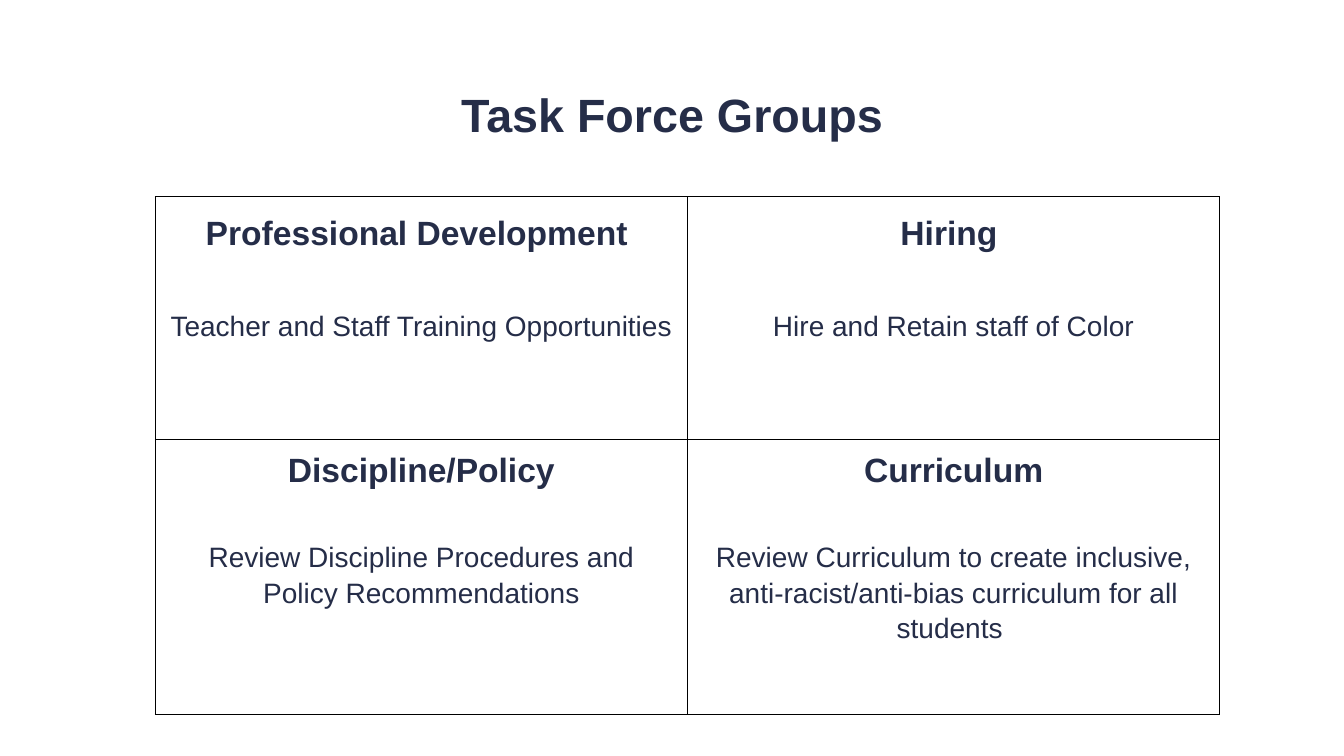
from lxml import etree
from pptx import Presentation
from pptx.dml.color import RGBColor
from pptx.enum.text import MSO_ANCHOR, PP_ALIGN
from pptx.oxml.ns import qn
from pptx.util import Pt

MIDDLE = MSO_ANCHOR.MIDDLE
CENTER = PP_ALIGN.CENTER

# Content
TITLE = "Task Force Groups"
GROUPS = [
    [("Professional Development ", "Teacher and Staff Training Opportunities"),
     ("Hiring ", "Hire and Retain staff of Color")],
    [("Discipline/Policy",
      "Review Discipline Procedures and Policy Recommendations"),
     ("Curriculum", "Review Curriculum to create inclusive, "
                    "anti-racist/anti-bias curriculum for all students ")],
]

# Theme
THEME = {
    "font": "Arial", "ink": "252D48", "paper": "FFFFFF", "rule": "000000",
    "title": 33.3, "head": 24, "body": 20,
}

# Layout, in points
WIDE, HIGH = 960, 540
TITLE_BOX = (74.9, 56.2, 810.7, 50.4)
LEFT, TOP, COL = 110.9, 140.4, 380.2
ROWS = [  # height, heading line spacing, gap above body
    (173.5, 1.15, 38.4),
    (196.6, 1.0, 33.6),
]
PAD, TITLE_PAD, RULE = 9.4, 7.2, 0.75


def set_pad(box, pad):
    box.margin_left = box.margin_right = Pt(pad)
    box.margin_top = box.margin_bottom = Pt(pad)


def style(para, text, size, bold, lead=1.0, gap=0):
    para.text = text
    para.alignment = CENTER
    para.line_spacing = lead
    para.space_before = Pt(gap)
    font = para.font
    font.name, font.size, font.bold = THEME["font"], Pt(size), bold
    font.color.rgb = RGBColor.from_string(THEME["ink"])


def set_rules(cell):
    props = cell._tc.get_or_add_tcPr()
    for spot, side in enumerate(("a:lnL", "a:lnR", "a:lnT", "a:lnB")):
        line = etree.Element(qn(side), w=str(Pt(RULE)))
        fill = etree.SubElement(line, qn("a:solidFill"))
        etree.SubElement(fill, qn("a:srgbClr"), val=THEME["rule"])
        props.insert(spot, line)


def add_title(slide):
    box = slide.shapes.add_textbox(*map(Pt, TITLE_BOX))
    frame = box.text_frame
    frame.word_wrap = True
    frame.vertical_anchor = MIDDLE
    set_pad(frame, TITLE_PAD)
    style(frame.paragraphs[0], TITLE, THEME["title"], True)


def add_groups(slide):
    count = len(GROUPS[0])
    high = sum(row[0] for row in ROWS)
    table = slide.shapes.add_table(
        len(GROUPS), count, Pt(LEFT), Pt(TOP), Pt(COL * count), Pt(high)).table
    table.first_row = table.horz_banding = False
    for col in table.columns:
        col.width = Pt(COL)
    for r, (tall, lead, gap) in enumerate(ROWS):
        table.rows[r].height = Pt(tall)
        for c, (head, body) in enumerate(GROUPS[r]):
            cell = table.cell(r, c)
            set_pad(cell, PAD)
            cell.fill.solid()
            cell.fill.fore_color.rgb = RGBColor.from_string(THEME["paper"])
            set_rules(cell)
            frame = cell.text_frame
            style(frame.paragraphs[0], head, THEME["head"], True, lead)
            style(frame.add_paragraph(), body, THEME["body"], False, 1.15, gap)


def main():
    deck = Presentation()
    deck.slide_width, deck.slide_height = Pt(WIDE), Pt(HIGH)
    slide = deck.slides.add_slide(deck.slide_layouts[6])
    add_title(slide)
    add_groups(slide)
    deck.save("out.pptx")


if __name__ == "__main__":
    main()
